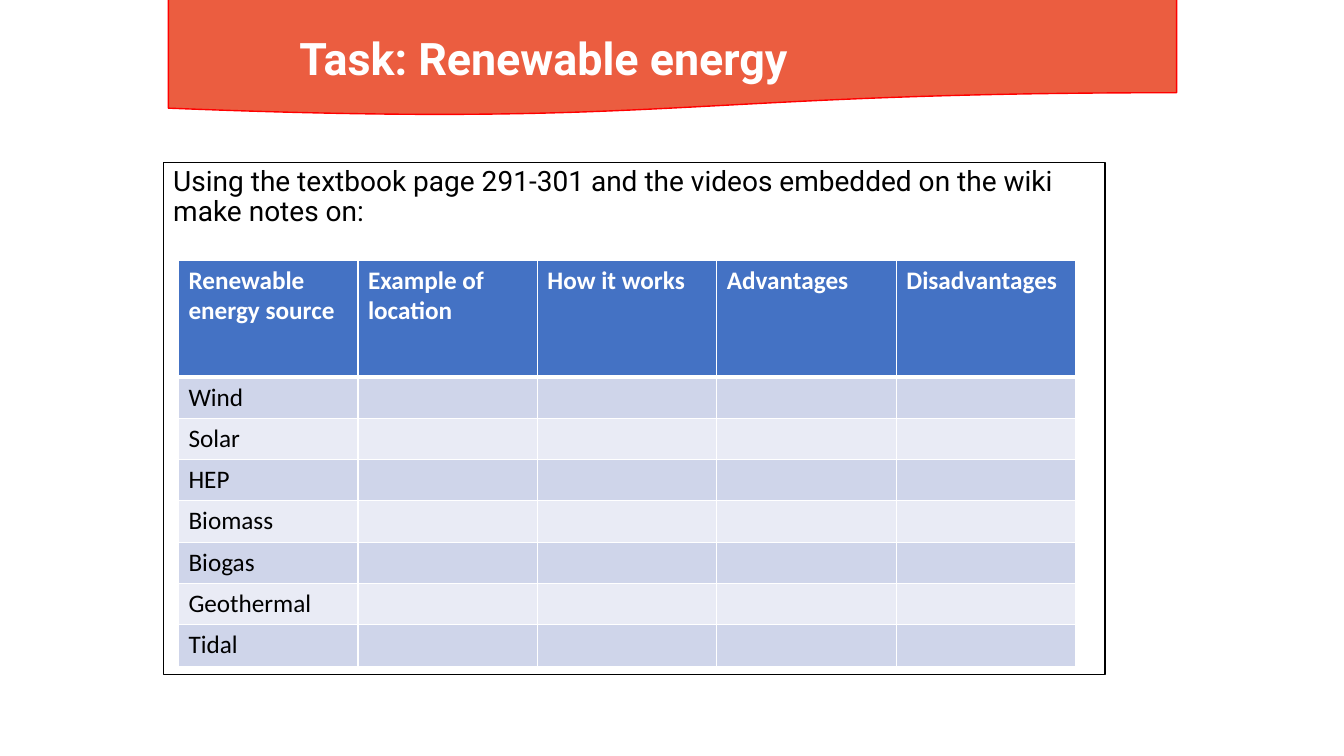
from lxml import etree
from pptx import Presentation
from pptx.dml.color import RGBColor
from pptx.enum.shapes import MSO_SHAPE
from pptx.enum.text import MSO_ANCHOR, PP_ALIGN
from pptx.oxml.ns import qn
from pptx.util import Inches, Pt

TITLE = "Task: Renewable energy"
TASK = "Using the textbook page 291-301 and the videos embedded on the wiki make notes on:"
HEADERS = ["Renewable energy source", "Example of location", "How it works", "Advantages", "Disadvantages"]
SOURCES = ["Wind", "Solar", "HEP", "Biomass", "Biogas", "Geothermal", "Tidal"]

WHITE = RGBColor(0xFF, 0xFF, 0xFF)
BLACK = RGBColor(0, 0, 0)
RED = RGBColor(0xFF, 0, 0)
ORANGE = RGBColor(0xEB, 0x5D, 0x40)
BLUE = RGBColor(0x44, 0x72, 0xC4)
BANDS = [RGBColor(0xCF, 0xD5, 0xEA), RGBColor(0xE9, 0xEB, 0xF5)]
RECTANGLE, DOCUMENT = MSO_SHAPE.RECTANGLE, MSO_SHAPE.FLOWCHART_DOCUMENT
TOP, LEFT = MSO_ANCHOR.TOP, PP_ALIGN.LEFT
COL_W, HEAD_H, ROW_H = 1.78, 1.16, 0.41


def set_font(p, name, size, color, bold=False):
    p.alignment = LEFT
    p.font.name, p.font.size, p.font.bold = name, Pt(size), bold
    p.font.color.rgb = color


def add_panel(slide, kind, box, fill, line, width):
    sp = slide.shapes.add_shape(kind, *map(Inches, box))
    sp.shadow.inherit = False
    sp.fill.solid()
    sp.fill.fore_color.rgb = fill
    sp.line.color.rgb = line
    sp.line.width = Pt(width)
    return sp


def set_border(cell, side, width):
    ln = etree.SubElement(cell._tc.get_or_add_tcPr(), qn("a:" + side), w=str(Pt(width)))
    fill = etree.SubElement(ln, qn("a:solidFill"))
    etree.SubElement(fill, qn("a:srgbClr"), val=str(WHITE))


def add_notes_table(slide):
    rows = [HEADERS] + [[source] + [""] * (len(HEADERS) - 1) for source in SOURCES]
    height = HEAD_H + ROW_H * len(SOURCES)
    table = slide.shapes.add_table(len(rows), len(HEADERS), Inches(1.77), Inches(2.58),
                                   Inches(COL_W * len(HEADERS)), Inches(height)).table
    for col in table.columns:
        col.width = Inches(COL_W)
    for i, texts in enumerate(rows):
        head = i == 0
        table.rows[i].height = Inches(HEAD_H if head else ROW_H)
        for j, text in enumerate(texts):
            cell = table.cell(i, j)
            cell.text = text
            set_font(cell.text_frame.paragraphs[0], "Calibri", 18, WHITE if head else BLACK, head)
            for side in ("lnL", "lnR", "lnT", "lnB"):
                thick = (head and side == "lnB") or (i == 1 and side == "lnT")
                set_border(cell, side, 3 if thick else 1)
            cell.fill.solid()
            cell.fill.fore_color.rgb = BLUE if head else BANDS[(i - 1) % 2]


def main():
    prs = Presentation()
    prs.slide_width, prs.slide_height = Inches(13.33), Inches(7.5)
    slide = prs.slides.add_slide(prs.slide_layouts[5])

    title = slide.shapes.title
    title.left, title.top, title.width, title.height = map(Inches, (2.87, 0.25, 6.84, 0.64))
    title.text = TITLE
    title.text_frame.vertical_anchor = TOP
    set_font(title.text_frame.paragraphs[0], "Roboto", 32, WHITE, True)

    banner = add_panel(slide, DOCUMENT, (1.67, -0.01, 10, 1.16), ORANGE, RED, 1)
    title.element.addprevious(banner.element)

    task = add_panel(slide, RECTANGLE, (1.62, 1.61, 9.34, 5.08), WHITE, BLACK, 0.75)
    color = task.fill._xPr.find(qn("a:solidFill"))[0]
    etree.SubElement(color, qn("a:alpha"), val="88000")
    tf = task.text_frame
    tf.word_wrap = True
    tf.vertical_anchor = TOP
    p = tf.paragraphs[0]
    p.text = TASK
    p.line_spacing = 0.9
    p.space_before = Pt(10)
    set_font(p, "Roboto", 20, BLACK)

    add_notes_table(slide)
    prs.save("out.pptx")


if __name__ == "__main__":
    main()
